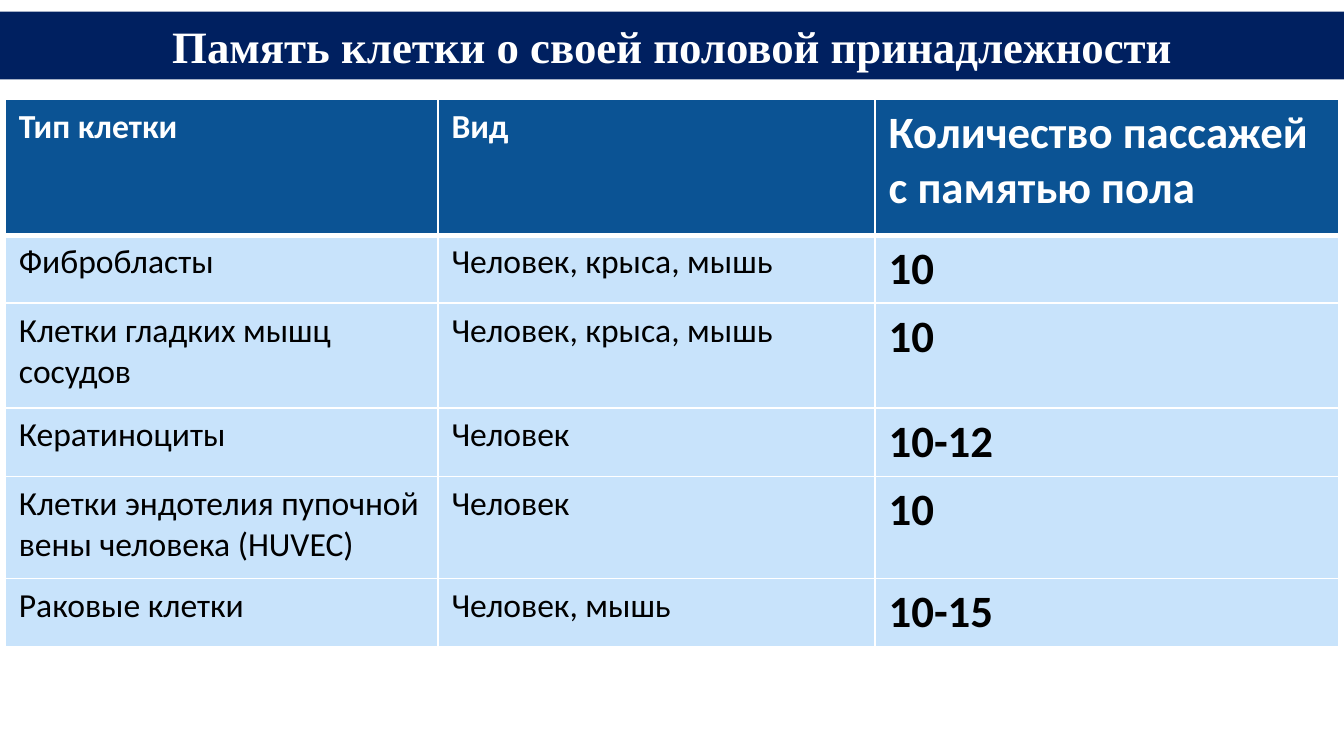
from dataclasses import dataclass

from lxml import etree
from pptx import Presentation
from pptx import util as u
from pptx.dml.color import RGBColor
from pptx.enum import shapes, text
from pptx.oxml import ns
from pptx.slide import Slide

NAVY = RGBColor(0x00, 0x20, 0x60)
BLUE = RGBColor(0x0B, 0x53, 0x94)
PALE_BLUE = RGBColor(0xC8, 0xE3, 0xFB)
WHITE = RGBColor(0xFF, 0xFF, 0xFF)
BLACK = RGBColor(0x00, 0x00, 0x00)

TITLE = "Память клетки о своей половой принадлежности"
ROWS = [
    ("Тип клетки", "Вид", "Количество пассажей с памятью пола"),
    ("Фибробласты", "Человек, крыса, мышь", "10"),
    ("Клетки гладких мышц сосудов", "Человек, крыса, мышь", "10"),
    ("Кератиноциты", "Человек", "10-12"),
    ("Клетки эндотелия пупочной вены человека (HUVEC)", "Человек", "10"),
    ("Раковые клетки", "Человек, мышь", "10-15"),
]
COLUMN_WIDTHS = (231.8, 234.2, 248.6)
ROW_HEIGHTS = (72.7, 36, 56.2, 36, 54.7, 36)


@dataclass
class SlideBuilder:
    slide: Slide
    title_font: str = "Times New Roman"
    body_font: str = "Calibri"
    body_size: int = 18
    large_size: int = 24
    thin_border: float = 1
    thick_border: float = 3

    def add_run(self, paragraph, wording, font_name, size, color, bold):
        run = paragraph.add_run()
        run.text = wording
        run.font.name = font_name
        run.font.size = u.Pt(size)
        run.font.bold = bold
        run.font.color.rgb = color

    def title_band(self, wording, left, top, width, height):
        band = self.slide.shapes.add_shape(
            shapes.MSO_SHAPE.RECTANGLE,
            u.Pt(left), u.Pt(top), u.Pt(width), u.Pt(height))
        band.shadow.inherit = False
        band.fill.solid()
        band.fill.fore_color.rgb = NAVY
        band.line.fill.background()
        frame = band.text_frame
        frame.word_wrap = True
        frame.vertical_anchor = text.MSO_ANCHOR.MIDDLE
        paragraph = frame.paragraphs[0]
        paragraph.alignment = text.PP_ALIGN.CENTER
        self.add_run(paragraph, wording, self.title_font, self.large_size,
                     WHITE, True)

    def cell_borders(self, cell, top, bottom):
        """Draw white borders; the side ones are always thin."""
        properties = cell._tc.get_or_add_tcPr()
        widths = {"L": self.thin_border, "R": self.thin_border,
                  "T": top, "B": bottom}
        for index, (side, width) in enumerate(widths.items()):
            line = etree.Element(ns.qn(f"a:ln{side}"), w=str(u.Pt(width)))
            fill = etree.SubElement(line, ns.qn("a:solidFill"))
            etree.SubElement(fill, ns.qn("a:srgbClr"), val=str(WHITE))
            properties.insert(index, line)

    def table(self, rows, left, top, column_widths, row_heights):
        """Add a table with a dark header and large figures in the last column."""
        table = self.slide.shapes.add_table(
            len(rows), len(column_widths), u.Pt(left), u.Pt(top),
            u.Pt(sum(column_widths)), u.Pt(sum(row_heights))).table
        for column, width in zip(table.columns, column_widths):
            column.width = u.Pt(width)
        for row, height in zip(table.rows, row_heights):
            row.height = u.Pt(height)
        for row_index, row in enumerate(rows):
            header = row_index == 0
            for column_index, wording in enumerate(row):
                last = column_index == len(row) - 1
                cell = table.cell(row_index, column_index)
                cell.fill.solid()
                cell.fill.fore_color.rgb = BLUE if header else PALE_BLUE
                self.cell_borders(
                    cell,
                    self.thick_border if row_index == 1 else self.thin_border,
                    self.thick_border if header else self.thin_border)
                self.add_run(cell.text_frame.paragraphs[0], wording,
                             self.body_font,
                             self.large_size if last else self.body_size,
                             WHITE if header else BLACK, header or last)


def main():
    presentation = Presentation()
    presentation.slide_width = u.Pt(720)
    presentation.slide_height = u.Pt(405)
    slide = presentation.slides.add_slide(presentation.slide_layouts[6])
    builder = SlideBuilder(slide)
    builder.title_band(TITLE, 0, 6.3, 720, 36.2)
    builder.table(ROWS, 2.9, 53.3, COLUMN_WIDTHS, ROW_HEIGHTS)
    presentation.save("out.pptx")


if __name__ == "__main__":
    main()
